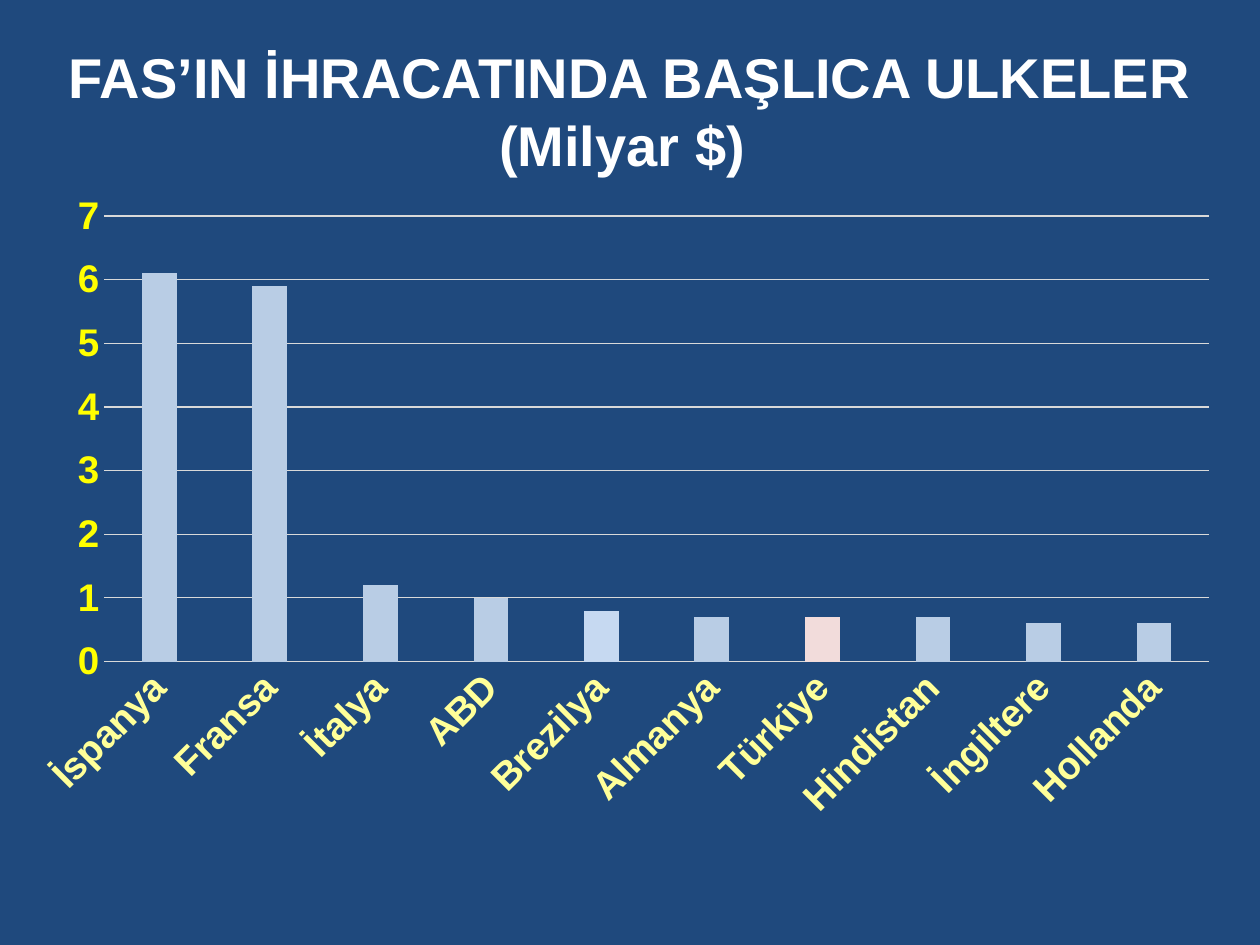
from lxml.etree import SubElement
from pptx import Presentation
from pptx.chart.chart import Chart
from pptx.chart.data import CategoryChartData
from pptx.dml.color import RGBColor
from pptx.enum.chart import XL_CHART_TYPE, XL_TICK_MARK
from pptx.enum.text import MSO_AUTO_SIZE, PP_ALIGN
from pptx.oxml.ns import qn
from pptx.slide import Slide
from pptx.text.text import Font
from pptx.util import Pt

FONT_NAME = "Arial"
NAVY, WHITE, GRID_GREY = "1F497D", "FFFFFF", "D9D9D9"
BAR_BLUE = "B9CDE5"
HIGHLIGHTS = {"Brezilya": "C6D9F1", "Türkiye": "F2DCDB"}
EXPORTS = {
    "İspanya": 6.1, "Fransa": 5.9, "İtalya": 1.2, "ABD": 1, "Brezilya": 0.8,
    "Almanya": 0.7, "Türkiye": 0.7, "Hindistan": 0.7, "İngiltere": 0.6, "Hollanda": 0.6,
}


def color(value: str) -> RGBColor:
    return RGBColor.from_string(value)


def style_font(font: Font, size: float, hex_color: str, bold: bool = True) -> None:
    font.name = FONT_NAME
    font.size = Pt(size)
    font.bold = bold
    font.color.rgb = color(hex_color)


def style_line(line, hex_color: str) -> None:
    line.color.rgb = color(hex_color)
    line.width = Pt(0.75)


def add_title(slide: Slide) -> None:
    box = slide.shapes.add_textbox(Pt(0), Pt(21), Pt(720), Pt(85))
    text_frame = box.text_frame
    text_frame.text = "FAS’IN İHRACATINDA BAŞLICA ULKELER (Milyar $) "
    text_frame.word_wrap = True
    text_frame.auto_size = MSO_AUTO_SIZE.SHAPE_TO_FIT_TEXT
    paragraph = text_frame.paragraphs[0]
    paragraph.alignment = PP_ALIGN.CENTER
    style_font(paragraph.runs[0].font, 32, WHITE)


def set_plot_area(chart: Chart, x: float, y: float, w: float, h: float) -> None:
    """Fix the inner plot area as fractions of the chart frame."""
    plot_area = chart._chartSpace.chart.plotArea
    for old_layout in plot_area.findall(qn("c:layout")):
        plot_area.remove(old_layout)
    layout = SubElement(plot_area, qn("c:layout"))
    plot_area.insert(0, layout)
    manual = SubElement(layout, qn("c:manualLayout"))
    settings = {"layoutTarget": "inner", "xMode": "edge", "yMode": "edge",
                "x": x, "y": y, "w": w, "h": h}
    for name, value in settings.items():
        SubElement(manual, qn(f"c:{name}")).set("val", str(value))


def style_axes(chart: Chart) -> None:
    category_axis, value_axis = chart.category_axis, chart.value_axis
    for axis, hex_color in ((category_axis, "FFFF99"), (value_axis, "FFFF00")):
        axis.major_tick_mark = XL_TICK_MARK.NONE
        axis.minor_tick_mark = XL_TICK_MARK.NONE
        style_font(axis.tick_labels.font, 22, hex_color)
    style_line(category_axis.format.line, GRID_GREY)
    label_body = category_axis._element.find(qn("c:txPr")).find(qn("a:bodyPr"))
    label_body.set("rot", "-2700000")
    label_body.set("vert", "horz")

    value_axis.minimum_scale, value_axis.maximum_scale = 0, 7
    value_axis.major_unit = 1
    value_axis.tick_labels.number_format = "General"
    value_axis.tick_labels.number_format_is_linked = False
    value_axis.format.line.fill.background()
    style_line(value_axis.major_gridlines.format.line, GRID_GREY)


def add_export_chart(slide: Slide) -> None:
    data = CategoryChartData()
    data.categories = list(EXPORTS)
    data.add_series("Series 1", list(EXPORTS.values()))
    chart = slide.shapes.add_chart(
        XL_CHART_TYPE.COLUMN_CLUSTERED, Pt(20), Pt(106), Pt(680.5), Pt(380), data
    ).chart
    chart.has_legend = False
    chart.has_title = False
    style_font(chart.font, 10, "000000", bold=False)
    style_axes(chart)
    set_plot_area(chart, 0.058, 0.046, 0.928, 0.67)

    plot = chart.plots[0]
    plot.vary_by_categories = False
    plot.gap_width, plot.overlap = 219, -27
    series = plot.series[0]
    series.format.fill.solid()
    series.format.fill.fore_color.rgb = color(BAR_BLUE)
    for index, country in enumerate(EXPORTS):
        if country in HIGHLIGHTS:
            fill = series.points[index].format.fill
            fill.solid()
            fill.fore_color.rgb = color(HIGHLIGHTS[country])


def main() -> None:
    presentation = Presentation()
    presentation.slide_width, presentation.slide_height = Pt(720), Pt(540)
    slide = presentation.slides.add_slide(presentation.slide_layouts[6])
    slide.background.fill.solid()
    slide.background.fill.fore_color.rgb = color(NAVY)
    add_title(slide)
    add_export_chart(slide)
    presentation.save("out.pptx")


if __name__ == "__main__":
    main()
